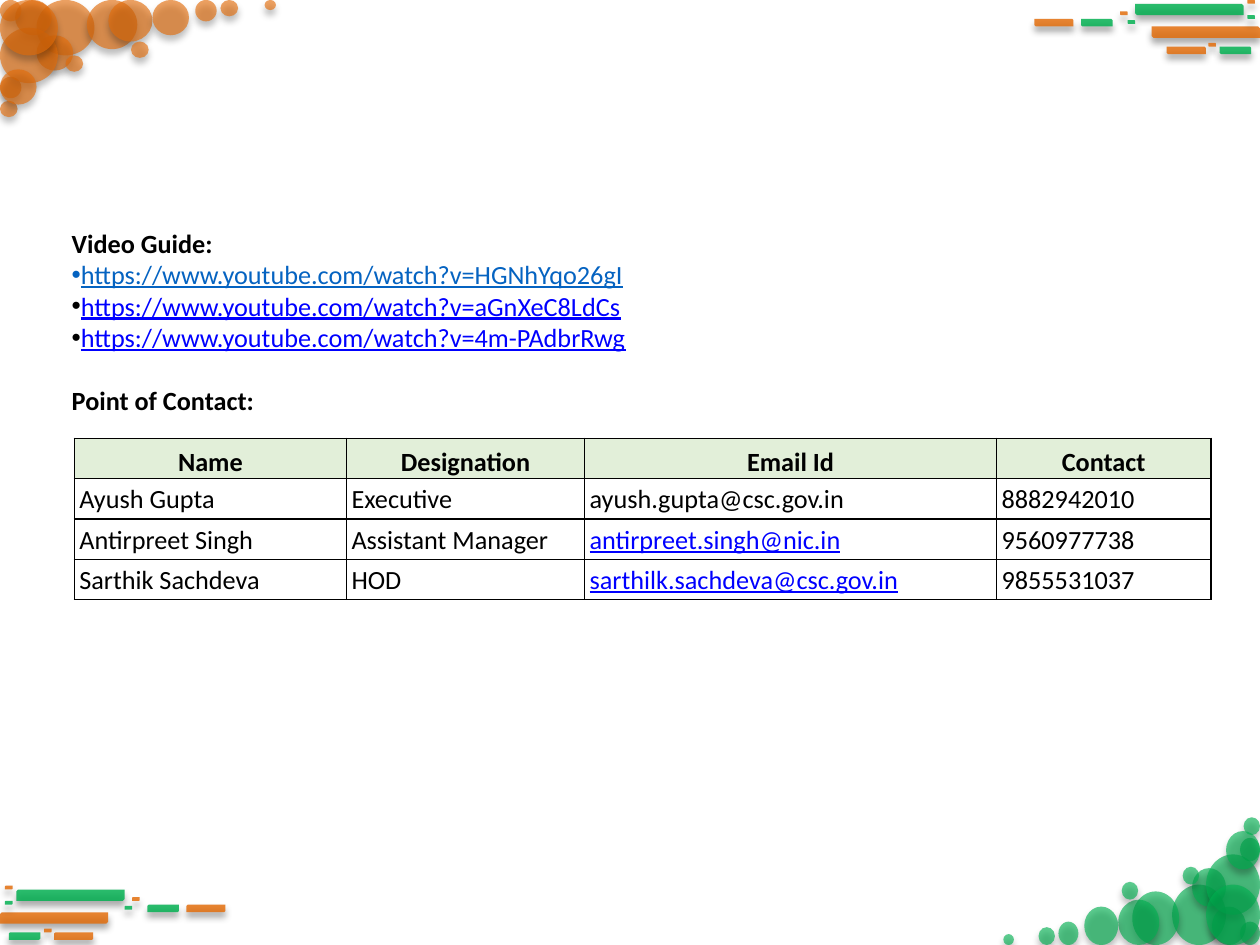
from typing import NamedTuple

from lxml.etree import SubElement
from pptx import Presentation
from pptx.dml.color import RGBColor
from pptx.enum.shapes import MSO_SHAPE as Shape
from pptx.enum.text import MSO_ANCHOR as Anchor, PP_ALIGN as Align
from pptx.oxml.ns import qn
from pptx.util import Inches, Pt

GREEN = RGBColor(0x00, 0xB0, 0x50)
ORANGE = RGBColor(0xE3, 0x6C, 0x09)
BLACK = RGBColor(0x00, 0x00, 0x00)
LINK = RGBColor(0x00, 0x00, 0xFF)
VISITED_LINK = RGBColor(0x05, 0x63, 0xC1)
HEADER_FILL = RGBColor(0xE2, 0xEF, 0xD9)

SLIDE_W, SLIDE_H = 10, 7.5
BARS_DROP = 7.03  # from the top right bars to the bottom left ones
BUBBLE_SCALE_X, BUBBLE_SCALE_Y = 0.93, 1.09  # green bubbles against orange


class Box(NamedTuple):
    left: float
    top: float
    width: float
    height: float


class Bar(NamedTuple):
    box: Box
    color: RGBColor


BARS = [
    Bar(Box(9.01, 0.03, 0.86, 0.09), GREEN),
    Bar(Box(9.14, 0.21, 0.86, 0.09), ORANGE),
    Bar(Box(8.58, 0.15, 0.25, 0.06), GREEN),
    Bar(Box(9.68, 0.37, 0.25, 0.06), GREEN),
    Bar(Box(9.26, 0.37, 0.31, 0.06), ORANGE),
    Bar(Box(8.21, 0.15, 0.31, 0.06), ORANGE),
    Bar(Box(8.89, 0.09, 0.06, 0.03), ORANGE),
    Bar(Box(8.95, 0.16, 0.06, 0.03), GREEN),
    Bar(Box(9.59, 0.34, 0.06, 0.03), ORANGE),
    Bar(Box(9.9, 0.12, 0.06, 0.03), GREEN),
    Bar(Box(9.9, 0, 0.06, 0.03), ORANGE),
]

BUBBLES = [
    Box(0.29, 0, 0.46, 0.44), Box(0.69, 0, 0.4, 0.39),
    Box(0.29, 0.28, 0.29, 0.28), Box(0.86, 0, 0.35, 0.33),
    Box(1.21, 0, 0.29, 0.28), Box(0.12, 0, 0.29, 0.28),
    Box(1.55, 0, 0.17, 0.17), Box(0, 0.61, 0.17, 0.17),
    Box(1.04, 0.33, 0.14, 0.13), Box(0.52, 0.44, 0.14, 0.13),
    Box(0, 0.8, 0.14, 0.13), Box(2.1, 0, 0.09, 0.08),
    Box(1.75, 0, 0.14, 0.13), Box(0, 0, 0.17, 0.17),
    Box(0, 0.22, 0.46, 0.44), Box(0, 0.55, 0.29, 0.28),
    Box(0, 0, 0.46, 0.44),
]

HEADER = ("Name", "Designation", "Email Id", "Contact")
CONTACTS = [
    ("Ayush Gupta", "Executive", "ayush.gupta@csc.gov.in", "8882942010"),
    ("Antirpreet Singh", "Assistant Manager", "antirpreet.singh@nic.in", "9560977738"),
    ("Sarthik Sachdeva", "HOD", "sarthilk.sachdeva@csc.gov.in", "9855531037"),
]
LINKED_EMAILS = {CONTACTS[1][2], CONTACTS[2][2]}
COLUMN_WIDTHS = (2.16, 1.89, 3.27, 1.7)
ROW_HEIGHT = 0.32


class Video(NamedTuple):
    url: str
    color: RGBColor
    bullet_color: RGBColor


VIDEOS = [
    Video("https://www.youtube.com/watch?v=HGNhYqo26gI", VISITED_LINK, VISITED_LINK),
    Video("https://www.youtube.com/watch?v=aGnXeC8LdCs", LINK, BLACK),
    Video("https://www.youtube.com/watch?v=4m-PAdbrRwg", LINK, BLACK),
]


def emu(box: Box) -> list:
    return [Inches(length) for length in box]


def add_color(parent, color: RGBColor):
    return SubElement(parent, qn("a:srgbClr"), val=str(color))


def add_ornament(slide, preset, box: Box, color: RGBColor, opacity: int):
    """Add a translucent, outline-free shape with a soft shadow below it."""
    ornament = slide.shapes.add_shape(preset, *emu(box))
    ornament.fill.solid()
    ornament.fill.fore_color.rgb = color
    ornament.line.fill.background()
    ornament.shadow.inherit = False
    properties = ornament._element.spPr
    fill_color = properties.find(qn("a:solidFill")).find(qn("a:srgbClr"))
    SubElement(fill_color, qn("a:alpha"), val=str(opacity * 1000))
    shadow = SubElement(
        properties.find(qn("a:effectLst")), qn("a:outerShdw"),
        blurRad=str(Pt(4)), dist=str(Pt(3)), dir="5400000", rotWithShape="0")
    SubElement(add_color(shadow, BLACK), qn("a:alpha"), val="40000")
    return ornament


def add_bars(slide, mirrored: bool) -> None:
    for box, color in BARS:
        if mirrored:
            box = box._replace(left=SLIDE_W - box.left - box.width,
                               top=box.top + BARS_DROP)
        bar = add_ornament(slide, Shape.SNIP_2_DIAG_RECTANGLE, box, color, 83)
        if mirrored:
            bar._element.spPr.find(qn("a:xfrm")).set("flipH", "1")


def add_bubbles(slide, color: RGBColor, turned: bool) -> None:
    """Draw the top left cluster, or turn it into the bottom right corner."""
    for box in BUBBLES:
        if turned:
            box = Box(SLIDE_W - (box.left + box.width) * BUBBLE_SCALE_X,
                      SLIDE_H - (box.top + box.height) * BUBBLE_SCALE_Y,
                      box.width * BUBBLE_SCALE_X, box.height * BUBBLE_SCALE_Y)
        bubble = add_ornament(slide, Shape.OVAL, box, color, 63)
        bubble.rotation = 180 if turned else 0


def write(paragraph, text: str, color: RGBColor = BLACK, **formats) -> None:
    run = paragraph.add_run()
    run.text = text
    run.font.color.rgb = color
    for name, value in {"name": "Calibri", "size": Pt(15), **formats}.items():
        setattr(run.font, name, value)


def add_borders(cell) -> None:
    properties = cell._tc.get_or_add_tcPr()
    for side in ("lnL", "lnR", "lnT", "lnB"):
        border = SubElement(properties, qn(f"a:{side}"), w=str(Pt(1)))
        add_color(SubElement(border, qn("a:solidFill")), BLACK)


def add_contacts(slide) -> None:
    rows = [HEADER, *CONTACTS]
    box = Box(0.59, 3.48, sum(COLUMN_WIDTHS), ROW_HEIGHT * len(rows))
    table = slide.shapes.add_table(len(rows), len(HEADER), *emu(box)).table
    table.first_row = table.horz_banding = False
    for column, width in zip(table.columns, COLUMN_WIDTHS):
        column.width = Inches(width)
    for r, texts in enumerate(rows):
        table.rows[r].height = Inches(ROW_HEIGHT)
        is_header = r == 0
        for c, text in enumerate(texts):
            cell = table.cell(r, c)
            add_borders(cell)
            formats = {
                "margin_left": Inches(0.04), "margin_right": Inches(0.04),
                "margin_top": 0, "margin_bottom": 0,
                "vertical_anchor": Anchor.BOTTOM if is_header else Anchor.MIDDLE,
            }
            for name, value in formats.items():
                setattr(cell, name, value)
            if is_header:
                cell.fill.solid()
                cell.fill.fore_color.rgb = HEADER_FILL
            else:
                cell.fill.background()
            paragraph = cell.text_frame.paragraphs[0]
            paragraph.alignment = Align.CENTER if is_header else Align.JUSTIFY
            paragraph.line_spacing = 1.07
            linked = text in LINKED_EMAILS
            write(paragraph, text, LINK if linked else BLACK,
                  bold=is_header, underline=linked)


def add_bullet(paragraph, color: RGBColor) -> None:
    properties = paragraph._p.get_or_add_pPr()
    properties.set("marL", "0")
    properties.set("indent", str(Inches(-0.1)))
    add_color(SubElement(properties, qn("a:buClr")), color)
    SubElement(properties, qn("a:buFont"), typeface="Arial")
    SubElement(properties, qn("a:buChar"), char="•")


def add_guide(slide) -> None:
    frame = slide.shapes.add_textbox(*emu(Box(0.51, 1.77, 6.84, 1.82))).text_frame
    formats = {
        "word_wrap": True, "vertical_anchor": Anchor.TOP,
        "margin_left": Inches(0.06), "margin_right": Inches(0.06),
        "margin_top": Inches(0.03), "margin_bottom": Inches(0.03),
    }
    for name, value in formats.items():
        setattr(frame, name, value)
    write(frame.paragraphs[0], "Video Guide:", bold=True)
    for video in VIDEOS:
        paragraph = frame.add_paragraph()
        add_bullet(paragraph, video.bullet_color)
        write(paragraph, video.url, video.color, underline=True)
    contact_heading = frame.add_paragraph()
    contact_heading.space_before = Pt(18)
    write(contact_heading, "Point of Contact:", bold=True)


def main() -> None:
    deck = Presentation()
    deck.slide_width, deck.slide_height = Inches(SLIDE_W), Inches(SLIDE_H)
    slide = deck.slides.add_slide(deck.slide_layouts[6])
    add_bars(slide, mirrored=False)
    add_bubbles(slide, GREEN, turned=True)
    add_bars(slide, mirrored=True)
    add_bubbles(slide, ORANGE, turned=False)
    add_contacts(slide)
    add_guide(slide)
    deck.save("out.pptx")


if __name__ == "__main__":
    main()
